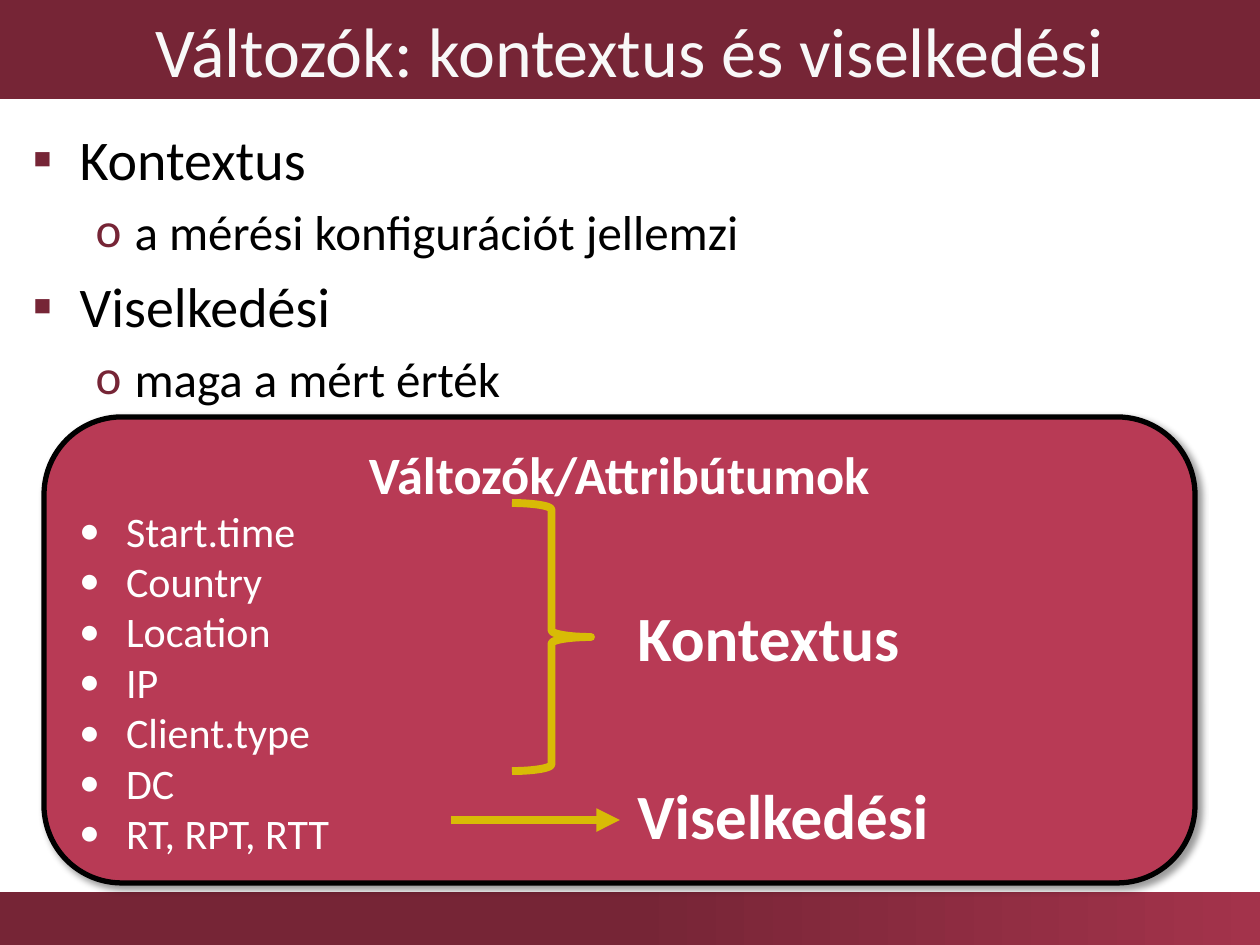
from dataclasses import dataclass
from typing import Optional

from lxml import etree
from pptx import Presentation
from pptx.dml.color import RGBColor
from pptx.enum.shapes import MSO_CONNECTOR, MSO_SHAPE
from pptx.enum.text import MSO_ANCHOR, MSO_AUTO_SIZE, PP_ALIGN
from pptx.oxml.ns import qn
from pptx.util import Emu, Pt

RECT = MSO_SHAPE.RECTANGLE
ROUND = MSO_SHAPE.ROUNDED_RECTANGLE
BRACE = MSO_SHAPE.RIGHT_BRACE
LINE = MSO_CONNECTOR.STRAIGHT
MIDDLE = MSO_ANCHOR.MIDDLE
TOP = MSO_ANCHOR.TOP
LEFT = PP_ALIGN.LEFT
CENTER = PP_ALIGN.CENTER
FIXED = MSO_AUTO_SIZE.NONE
GROW = MSO_AUTO_SIZE.SHAPE_TO_FIT_TEXT

FONT = "Calibri"
WINE = "762536"
ROSE = "B83A55"
GOLD = "D8BB06"
WHITE = "FFFFFF"
BLACK = "000000"
SCALE = 914400 / 126


@dataclass(frozen=True)
class Box:
    left: int
    top: int
    width: int
    height: int


@dataclass(frozen=True)
class Mark:
    sign: str
    color: str
    margin: int
    hang: int


@dataclass(frozen=True)
class Row:
    text: str
    size: int
    color: str
    bold: bool = False
    align: PP_ALIGN = LEFT
    level: int = 0
    gap: float = 0
    mark: Optional[Mark] = None


def px(count: int) -> Emu:
    return Emu(round(count * SCALE))


def paint(color: str) -> RGBColor:
    return RGBColor.from_string(color)


def spots(box: Box) -> list[Emu]:
    return [px(box.left), px(box.top), px(box.width), px(box.height)]


def place(shape, box: Box) -> None:
    shape.left, shape.top, shape.width, shape.height = spots(box)


def add_mark(para, mark: Mark) -> None:
    props = para._p.get_or_add_pPr()
    props.set("marL", str(px(mark.margin)))
    props.set("indent", str(-px(mark.hang)))
    tint = etree.SubElement(props, qn("a:buClr"))
    etree.SubElement(tint, qn("a:srgbClr"), val=mark.color)
    etree.SubElement(props, qn("a:buFont"), typeface=FONT)
    etree.SubElement(props, qn("a:buChar"), char=mark.sign)


def write(frame, rows: list[Row], anchor: MSO_ANCHOR = TOP) -> None:
    frame.word_wrap = True
    frame.auto_size = FIXED
    frame.vertical_anchor = anchor
    frame.text = "\n".join(row.text for row in rows)
    for para, row in zip(frame.paragraphs, rows):
        if row.mark:
            add_mark(para, row.mark)
        para.level = row.level
        para.alignment = row.align
        para.space_before = Pt(row.gap)
        font = para.font
        font.name = FONT
        font.size = Pt(row.size)
        font.bold = row.bold
        font.color.rgb = paint(row.color)


def stroke(line, color: str, width: float) -> None:
    line.color.rgb = paint(color)
    line.width = Pt(width)


def add_shape(slide, kind: MSO_SHAPE, box: Box):
    shape = slide.shapes.add_shape(kind, *spots(box))
    shape.shadow.inherit = False
    return shape


def add_bar(slide, box: Box) -> None:
    bar = add_shape(slide, RECT, box)
    bar.line.fill.background()
    bar.fill.gradient()
    bar.fill.gradient_angle = 0
    stops = zip(bar.fill.gradient_stops, [(0.5, WINE), (1, "A3334B")])
    for stop, (spot, color) in stops:
        stop.position = spot
        stop.color.rgb = paint(color)


def add_panel(slide, box: Box, rows: list[Row]) -> None:
    panel = add_shape(slide, ROUND, box)
    panel.fill.solid()
    panel.fill.fore_color.rgb = paint(ROSE)
    stroke(panel.line, BLACK, 3)
    shade = etree.SubElement(
        panel._element.spPr.find(qn("a:effectLst")), qn("a:outerShdw"),
        blurRad=str(Pt(4)), dist=str(Pt(3)), dir="2700000",
        algn="tl", rotWithShape="0")
    tint = etree.SubElement(shade, qn("a:srgbClr"), val=BLACK)
    etree.SubElement(tint, qn("a:alpha"), val="40000")
    write(panel.text_frame, rows, MIDDLE)


def add_brace(slide, box: Box) -> None:
    brace = add_shape(slide, BRACE, box)
    brace.fill.background()
    stroke(brace.line, GOLD, 4.5)


def add_arrow(slide, start: int, end: int, top: int) -> None:
    arrow = slide.shapes.add_connector(
        LINE, px(start), px(top), px(end), px(top))
    stroke(arrow.line, GOLD, 4.5)
    props = arrow._element.spPr
    etree.SubElement(props.find(qn("a:ln")), qn("a:tailEnd"), type="triangle")
    etree.SubElement(props, qn("a:effectLst"))


def add_label(slide, text: str, box: Box) -> None:
    label = slide.shapes.add_textbox(*spots(box))
    write(label.text_frame, [Row(text, 36, WHITE, bold=True)])
    label.text_frame.auto_size = GROW


def main() -> None:
    deck = Presentation()
    deck.slide_width, deck.slide_height = px(1260), px(945)
    slide = deck.slides.add_slide(deck.slide_layouts[1])
    add_bar(slide, Box(0, 892, 1260, 53))

    title = slide.shapes.title
    place(title, Box(0, 0, 1260, 99))
    title.fill.solid()
    title.fill.fore_color.rgb = paint(WINE)
    head = Row("Változók: kontextus és viselkedési", 40, "F8F8F8", align=CENTER)
    write(title.text_frame, [head], MIDDLE)

    square = Mark("▪", WINE, 47, 47)
    ring = Mark("o", WINE, 102, 39)
    body = slide.placeholders[1]
    place(body, Box(20, 118, 1221, 762))
    write(body.text_frame, [
        Row("Kontextus", 32, BLACK, mark=square),
        Row("a mérési konfigurációt jellemzi", 28, BLACK,
            level=1, gap=5.6, mark=ring),
        Row("Viselkedési", 32, BLACK, gap=6.4, mark=square),
        Row("maga a mért érték", 28, BLACK, level=1, gap=5.6, mark=ring),
    ])

    dot = Mark("•", WHITE, 47, 47)
    names = ["Start.time", "Country", "Location", "IP", "Client.type", "DC",
             "RT, RPT, RTT"]
    rows = [Row("Változók/Attribútumok", 30, WHITE, bold=True, align=CENTER)]
    rows += [Row(name, 24, WHITE, mark=dot) for name in names]
    add_panel(slide, Box(44, 417, 1151, 466), rows)

    add_brace(slide, Box(512, 503, 79, 268))
    add_arrow(slide, 451, 620, 820)
    for text, top in [("Kontextus", 592), ("Viselkedési", 770)]:
        add_label(slide, text, Box(625, top, 367, 89))
    deck.save("out.pptx")


if __name__ == "__main__":
    main()
